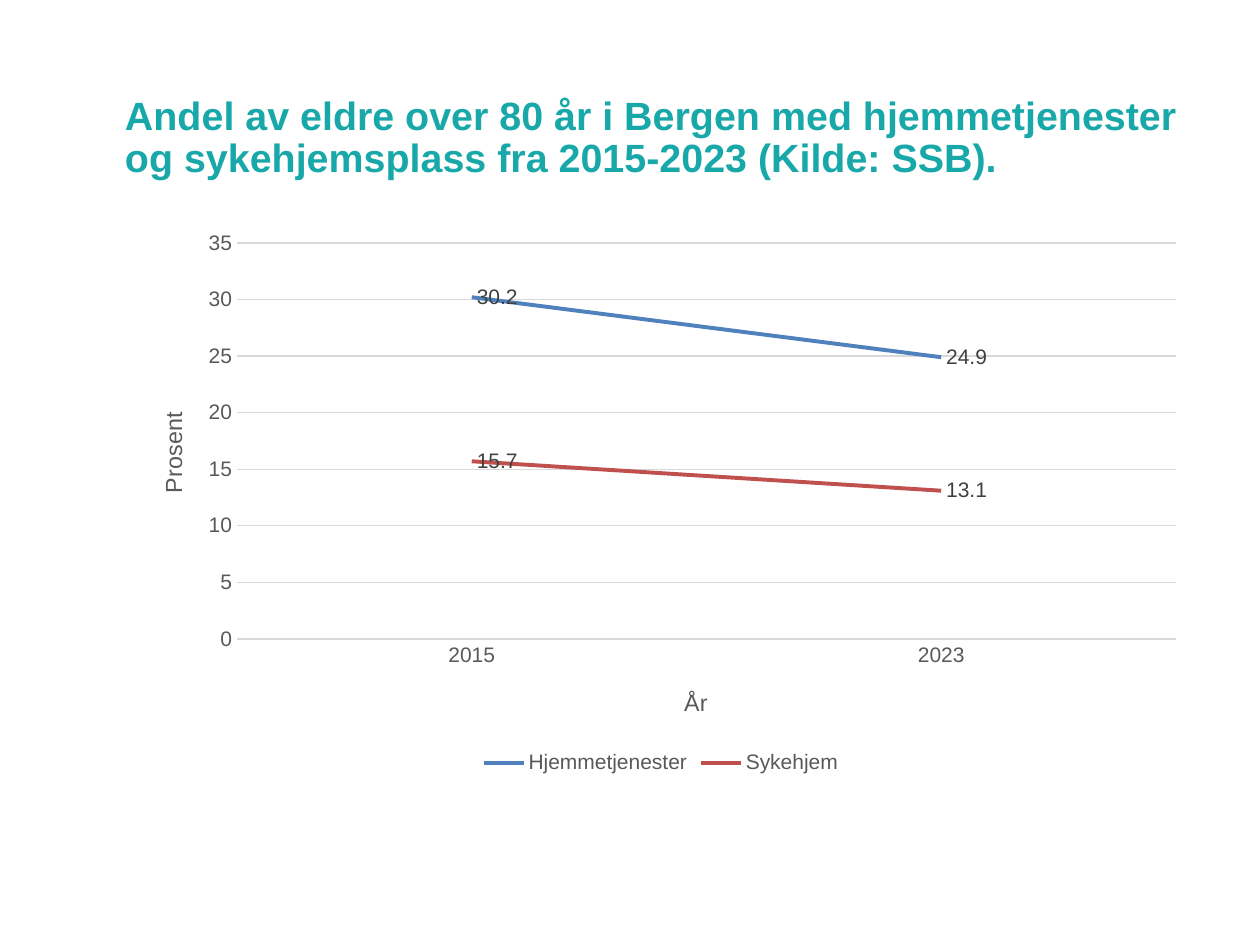
from lxml import etree
from pptx import Presentation
from pptx.chart.data import CategoryChartData
from pptx.dml.color import RGBColor
from pptx.enum.chart import XL_CHART_TYPE, XL_LABEL_POSITION, XL_LEGEND_POSITION, XL_MARKER_STYLE, XL_TICK_MARK
from pptx.enum.text import MSO_ANCHOR
from pptx.oxml.ns import qn
from pptx.util import Emu, Pt

LINE, NO_MARKER, NO_TICK = XL_CHART_TYPE.LINE, XL_MARKER_STYLE.NONE, XL_TICK_MARK.NONE
RIGHT, LEGEND_BOTTOM, BOTTOM = XL_LABEL_POSITION.RIGHT, XL_LEGEND_POSITION.BOTTOM, MSO_ANCHOR.BOTTOM
FONT = "Arial"
COLORS = {"title": "18A8A9", "axis": "595959", "label": "404040", "grid": "D9D9D9",
          "Hjemmetjenester": "4F81BD", "Sykehjem": "C0504D"}
YEARS = ["2015", "2023"]
SHARES = {"Hjemmetjenester": [30.2, 24.9], "Sykehjem": [15.7, 13.1]}


def px(n):
    """Turn px into EMU at 126 px to the inch."""
    return Emu(round(n * 914400 / 126))


def rgb(name):
    """Look up a named colour."""
    return RGBColor.from_string(COLORS[name])


def style_font(font, size, color, bold=False):
    """Set face, size, weight and colour."""
    font.name, font.size, font.bold = FONT, Pt(size), bold
    font.color.rgb = rgb(color)


def style_line(line, color, width):
    """Set line colour and width in points."""
    line.color.rgb, line.width = rgb(color), Pt(width)


def set_layout(element, index, box, x, y, w=None, h=None):
    """Pin a chart part at px offsets inside the chart box."""
    for old in element.findall(qn("c:layout")):
        element.remove(old)
    layout = etree.Element(qn("c:layout"))
    manual = etree.SubElement(layout, qn("c:manualLayout"))
    settings = [("xMode", "edge"), ("yMode", "edge"), ("x", x / box[2]), ("y", y / box[3])]
    if w:
        settings = [("layoutTarget", "inner")] + settings + [("w", w / box[2]), ("h", h / box[3])]
    for tag, value in settings:
        etree.SubElement(manual, qn(f"c:{tag}")).set("val", str(value))
    element.insert(index, layout)


def style_axis(axis, title, box, x, y):
    """Format an axis and place its title."""
    axis.major_tick_mark = axis.minor_tick_mark = NO_TICK
    style_font(axis.tick_labels.font, 12, "axis")
    tf = axis.axis_title.text_frame
    tf.text = title
    style_font(tf.paragraphs[0].runs[0].font, 13.3, "axis")
    set_layout(axis.axis_title.element, 1, box, x, y)


def add_title(slide, box, text):
    """Add the bottom-anchored slide title."""
    tf = slide.shapes.add_textbox(*map(px, box)).text_frame
    tf.word_wrap, tf.vertical_anchor = True, BOTTOM
    tf.margin_left = tf.margin_right = tf.margin_top = tf.margin_bottom = 0
    tf.text = text
    p = tf.paragraphs[0]
    p.line_spacing = Pt(24)
    style_font(p.runs[0].font, 22.5, "title", bold=True)


def add_share_chart(slide, box):
    """Add the line chart of care shares by year."""
    data = CategoryChartData()
    data.categories = YEARS
    for name, values in SHARES.items():
        data.add_series(name, values)
    chart = slide.shapes.add_chart(LINE, *map(px, box), data).chart
    chart.font.name, chart.font.size = FONT, Pt(10)
    chart.has_title = False
    chart.has_legend = True
    chart.legend.position, chart.legend.include_in_layout = LEGEND_BOTTOM, False
    style_font(chart.legend.font, 12, "axis")

    style_axis(chart.category_axis, "År", box, 555, 464)
    style_line(chart.category_axis.format.line, "grid", 0.75)
    axis = chart.value_axis
    style_axis(axis, "Prosent", box, 29, 188)
    axis.minimum_scale, axis.maximum_scale, axis.major_unit = 0, 35, 5
    axis.format.line.fill.background()
    style_line(axis.major_gridlines.format.line, "grid", 0.75)
    set_layout(chart.element.find(".//" + qn("c:plotArea")), 0, box, 112, 23, 939, 396)

    chart.plots[0].vary_by_categories = False
    for s in chart.plots[0].series:
        s.smooth, s.marker.style = False, NO_MARKER
        style_line(s.format.line, s.name, 2.25)
        labels = s.data_labels
        labels.show_value, labels.position = True, RIGHT
        style_font(labels.font, 12, "label")


def main():
    """Build and save the slide."""
    prs = Presentation()
    prs.slide_width, prs.slide_height = px(1260), px(945)
    slide = prs.slides.add_slide(prs.slide_layouts[6])
    add_title(slide, (125, 23, 1072, 157),
              "Andel av eldre over 80 år i Bergen med hjemmetjenester "
              "og sykehjemsplass fra 2015-2023 (Kilde: SSB).")
    add_share_chart(slide, (125, 220, 1072, 559))
    prs.save("out.pptx")


if __name__ == "__main__":
    main()
